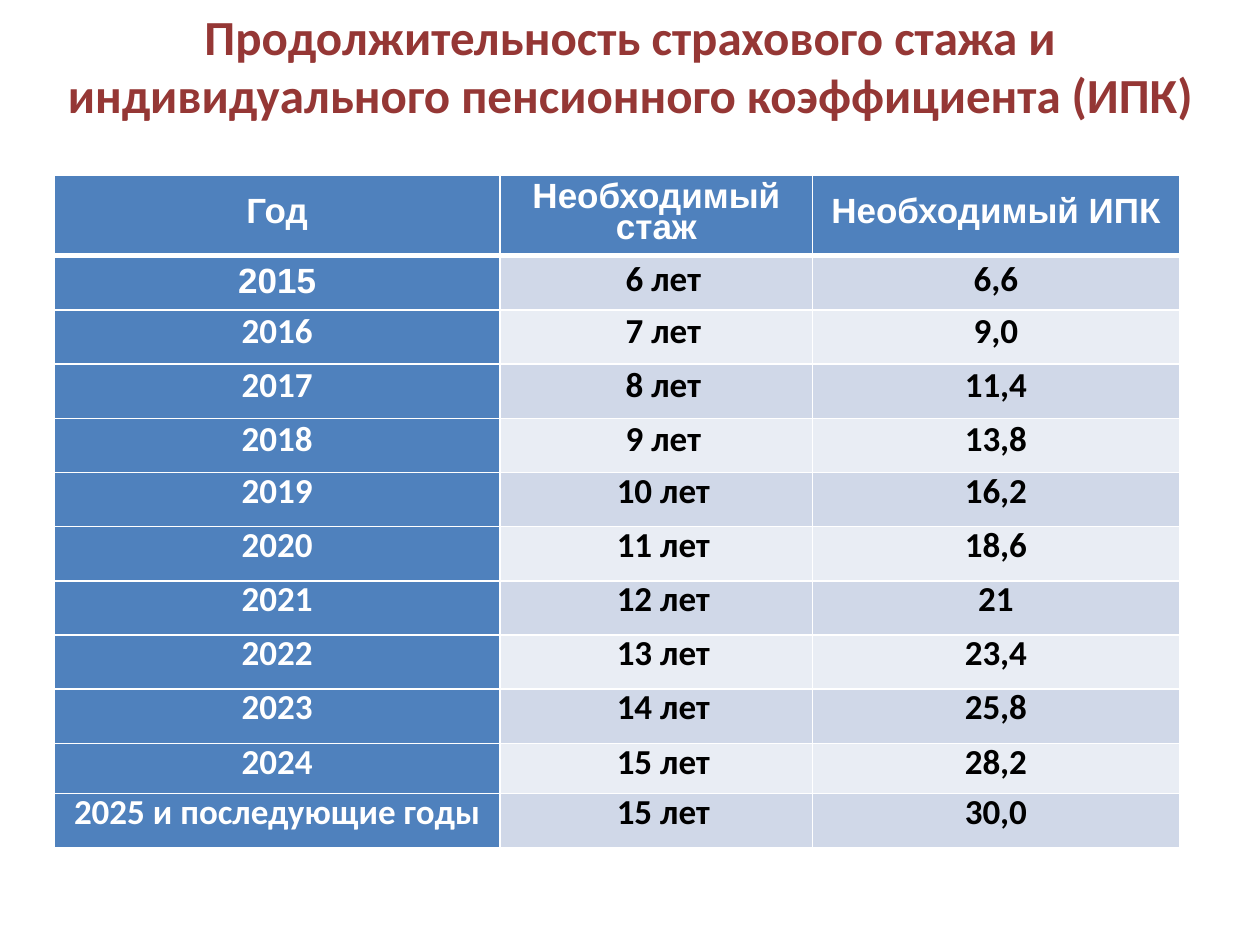
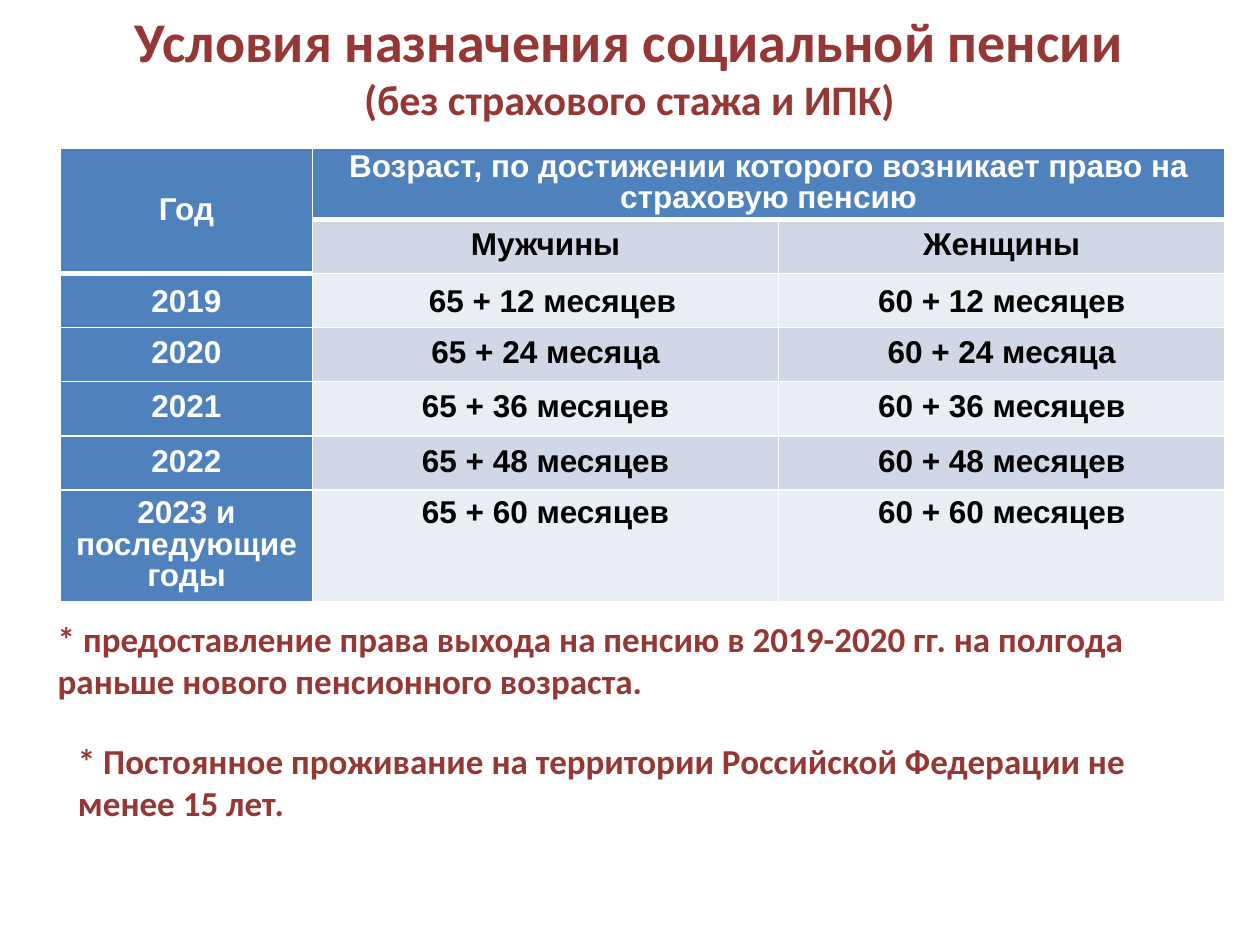
import dataclasses

import pptx
import pptx.dml.color
import pptx.enum.text
import pptx.oxml.ns
import pptx.util
from lxml import etree

Inches = pptx.util.Inches
Pt = pptx.util.Pt
Color = pptx.dml.color.RGBColor.from_string
Align = pptx.enum.text.PP_ALIGN
Anchor = pptx.enum.text.MSO_ANCHOR


@dataclasses.dataclass(frozen=True)
class Theme:
    accent: str = "953735"
    header: str = "4F81BD"
    bands: tuple = ("D0D8E8", "E9EDF4")
    light: str = "FFFFFF"
    dark: str = "000000"
    heading_font: str = "Calibri"
    table_font: str = "Arial"
    title_size: int = 28
    large_title_size: int = 32
    subtitle_size: int = 24
    note_size: int = 20
    line_spacing: int = 18
    row_height: float = 0.43
    cell_indent: float = 0.11
    thin_border: int = 1
    thick_border: int = 3


THEME = Theme()

INSURANCE_ROWS = [
    ("Год", "Необходимый стаж", "Необходимый ИПК"),
    ("2015", "6 лет", "6,6"),
    ("2016", "7 лет", "9,0"),
    ("2017", "8 лет", "11,4"),
    ("2018", "9 лет", "13,8"),
    ("2019", "10 лет", "16,2"),
    ("2020", "11 лет", "18,6"),
    ("2021", "12 лет", "21"),
    ("2022", "13 лет", "23,4"),
    ("2023", "14 лет", "25,8"),
    ("2024", "15 лет", "28,2"),
    ("2025 и последующие годы", "15 лет", "30,0"),
]
SOCIAL_ROWS = [
    ("Год", "Возраст, по достижении которого возникает право на страховую пенсию", ""),
    ("", "Мужчины", "Женщины"),
    ("2019", "65 + 12 месяцев", "60 + 12 месяцев"),
    ("2020", "65 + 24 месяца", "60 + 24 месяца"),
    ("2021", "65 + 36 месяцев", "60 + 36 месяцев"),
    ("2022", "65 + 48 месяцев", "60 + 48 месяцев"),
    ("2023 и последующие годы", "65 + 60 месяцев", "60 + 60 месяцев"),
]


def add_bold_run(paragraph, text, font_name, size, color):
    run = paragraph.add_run()
    run.text = text
    run.font.name = font_name
    run.font.size = Pt(size)
    run.font.bold = True
    run.font.color.rgb = Color(color)


def add_heading_text(slide, box, lines, alignment):
    """Add accent text; lines holds one (text, size) pair per paragraph."""
    shape = slide.shapes.add_textbox(*(Inches(length) for length in box))
    frame = shape.text_frame
    frame.word_wrap = True
    frame.auto_size = pptx.enum.text.MSO_AUTO_SIZE.SHAPE_TO_FIT_TEXT
    for index, (text, size) in enumerate(lines):
        paragraph = frame.add_paragraph() if index else frame.paragraphs[0]
        paragraph.alignment = alignment
        add_bold_run(paragraph, text, THEME.heading_font, size, THEME.accent)


def add_title(slide, box, *lines):
    add_heading_text(slide, box, lines, Align.CENTER)


def add_note(slide, box, text):
    add_heading_text(slide, box, [(text, THEME.note_size)], Align.LEFT)


def set_border(cell, edge, width):
    properties = cell._tc.get_or_add_tcPr()
    line = etree.SubElement(properties, pptx.oxml.ns.qn(f"a:{edge}"), w=str(Pt(width)))
    fill = etree.SubElement(line, pptx.oxml.ns.qn("a:solidFill"))
    etree.SubElement(fill, pptx.oxml.ns.qn("a:srgbClr"), val=THEME.light)


def style_cell(cell, row, column, header_rows):
    """Set borders, then fill: that is the order the cell properties need."""
    in_header = row == 0 or (column == 0 and row < header_rows)
    set_border(cell, "lnL", THEME.thin_border)
    set_border(cell, "lnR", THEME.thin_border)
    if row == 0:
        set_border(cell, "lnT", THEME.thin_border)
    set_border(cell, "lnB", THEME.thick_border if in_header else THEME.thin_border)
    cell.fill.solid()
    cell.fill.fore_color.rgb = Color(
        THEME.header if in_header or column == 0 else THEME.bands[(row - 1) % 2])


def write_cell(cell, text, font_name, size, color, anchor, tight, indent):
    side, top = (0.07, 0) if tight else (0.04, 0.07)
    cell.margin_left = cell.margin_right = Inches(side)
    cell.margin_top = cell.margin_bottom = Inches(top)
    cell.vertical_anchor = anchor
    paragraph = cell.text_frame.paragraphs[0]
    paragraph.alignment = Align.CENTER
    paragraph.line_spacing = Pt(THEME.line_spacing)
    if indent:
        paragraph._p.get_or_add_pPr().set("marL", str(Inches(THEME.cell_indent)))
    add_bold_run(paragraph, text, font_name, size, color)


def add_pension_table(slide, left, top, widths, heights, rows, size, anchors,
                      header_rows=1, calibri_cells=(), indented_rows=(), tight_cells=()):
    """Add a year table; anchors and heights hold one entry per row."""
    shape = slide.shapes.add_table(len(rows), len(widths), Inches(left), Inches(top),
                                   Inches(sum(widths)), Inches(sum(heights)))
    table = shape.table
    table.first_row = table.horz_banding = False
    for column, width in zip(table.columns, widths):
        column.width = Inches(width)
    for table_row, height in zip(table.rows, heights):
        table_row.height = Inches(height)

    for row, texts in enumerate(rows):
        for column, text in enumerate(texts):
            cell = table.cell(row, column)
            style_cell(cell, row, column, header_rows)
            if not text:
                continue
            write_cell(
                cell, text,
                THEME.heading_font if (row, column) in calibri_cells else THEME.table_font,
                size,
                THEME.light if row == 0 or column == 0 else THEME.dark,
                anchors[row],
                tight=(row, column) in tight_cells,
                indent=column == 1 and row in indented_rows)
    return table


def build_insurance_slide(slide):
    add_title(slide, (0, 0, 10, 1.04),
              ("Продолжительность страхового стажа и индивидуального "
               "пенсионного коэффициента (ИПК)", THEME.title_size))
    row_count = len(INSURANCE_ROWS)
    heights = [THEME.row_height] * row_count
    heights[-2] = 0.4
    anchors = [Anchor.MIDDLE, Anchor.BOTTOM] + [Anchor.MIDDLE] * 3
    anchors += [Anchor.TOP] * (row_count - len(anchors))
    calibri_cells = {(row, column) for row in range(1, row_count)
                     for column in range(3)} - {(1, 0)}
    add_pension_table(slide, 0.43, 1.39, (3.54, 2.48, 2.91), heights, INSURANCE_ROWS,
                      20, anchors, calibri_cells=calibri_cells,
                      indented_rows=range(1, row_count), tight_cells={(0, 0)})


def build_social_slide(slide):
    add_title(slide, (0.35, 0, 9.29, 1.04),
              ("Условия назначения социальной пенсии", THEME.large_title_size),
              ("(без страхового стажа и ИПК)", THEME.subtitle_size))
    heights = [0.56] + [THEME.row_height] * (len(SOCIAL_ROWS) - 1)
    anchors = [Anchor.MIDDLE] * 2 + [Anchor.BOTTOM] + [Anchor.MIDDLE] * 3 + [Anchor.TOP]
    table = add_pension_table(slide, 0.48, 1.18, (2, 3.7, 3.54), heights, SOCIAL_ROWS,
                              18, anchors, header_rows=2, indented_rows={2},
                              tight_cells={(0, 0), (0, 1)})
    table.cell(0, 0).merge(table.cell(1, 0))
    table.cell(0, 1).merge(table.cell(0, 2))
    add_note(slide, (0.36, 4.85, 9.13, 0.77),
             "* предоставление права выхода на пенсию в 2019-2020 гг. "
             "на полгода раньше нового пенсионного возраста.")
    add_note(slide, (0.52, 5.82, 9.13, 0.77),
             "* Постоянное проживание на территории Российской Федерации "
             "не менее 15 лет.")


def main():
    presentation = pptx.Presentation()
    presentation.slide_width = Inches(10)
    presentation.slide_height = Inches(7.5)
    blank_layout = presentation.slide_layouts[6]
    for build_slide in (build_insurance_slide, build_social_slide):
        build_slide(presentation.slides.add_slide(blank_layout))
    presentation.save("out.pptx")


if __name__ == "__main__":
    main()
